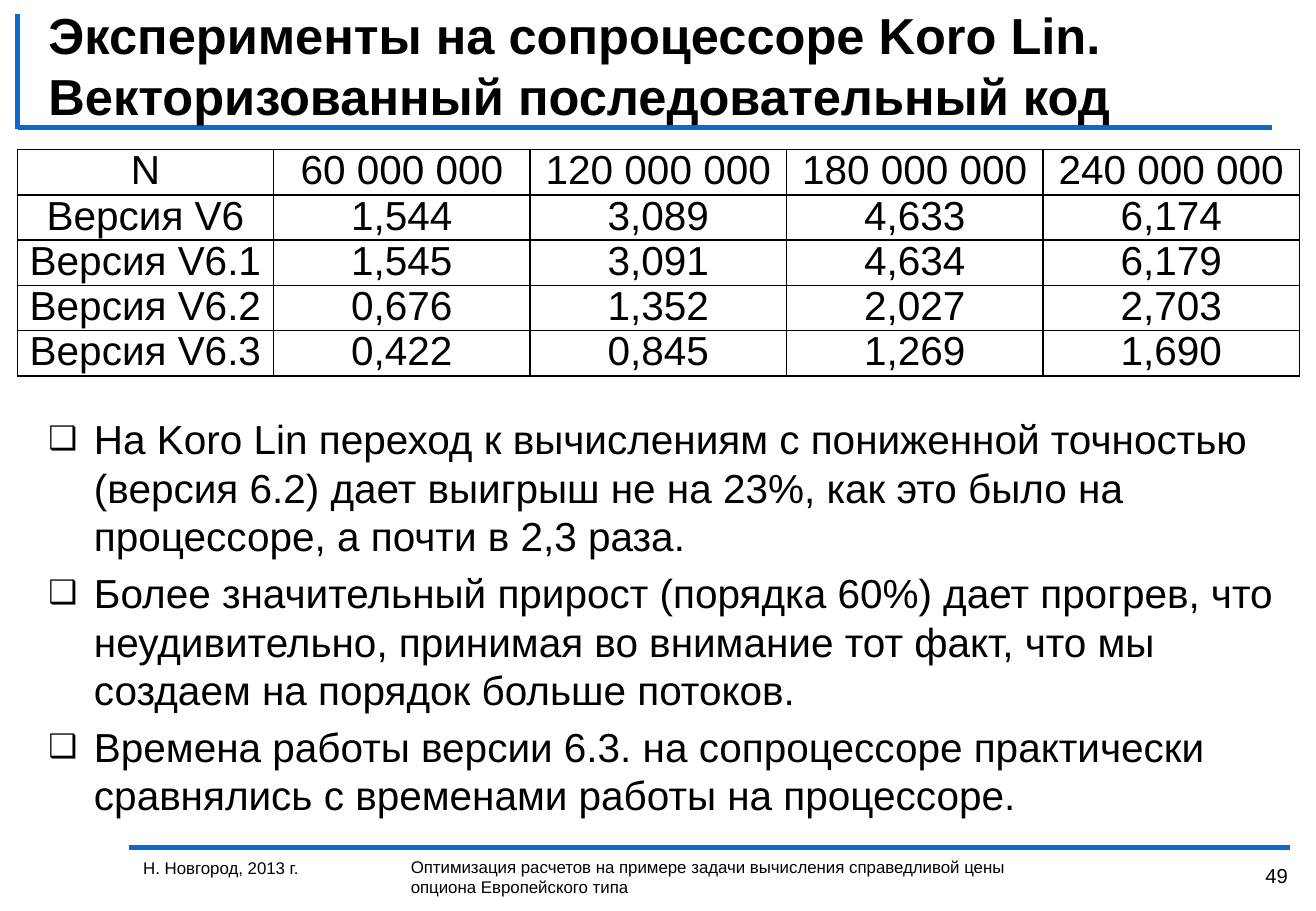
"""Build the slide on coprocessor timings of the vectorized sequential code."""
from dataclasses import dataclass

from lxml import etree
from pptx import Presentation
from pptx.dml.color import RGBColor
from pptx.enum.shapes import MSO_CONNECTOR
from pptx.enum.text import MSO_ANCHOR, PP_ALIGN
from pptx.oxml.ns import qn
from pptx.util import Pt

STRAIGHT = MSO_CONNECTOR.STRAIGHT
TOP, MIDDLE = MSO_ANCHOR.TOP, MSO_ANCHOR.MIDDLE
LEFT, CENTER, RIGHT = PP_ALIGN.LEFT, PP_ALIGN.CENTER, PP_ALIGN.RIGHT


@dataclass(frozen=True)
class Theme:
    font: str = "Arial"
    ink: str = "000000"
    accent: str = "0969CD"
    title: float = 30
    body: float = 24
    number: float = 12
    footer: float = 10
    rule: float = 3
    border: float = 1
    table_leading: float = 0.93


TIMINGS = [
    ["N", "60 000 000", "120 000 000", "180 000 000", "240 000 000"],
    ["Версия V6", "1,544", "3,089", "4,633", "6,174"],
    ["Версия V6.1", "1,545", "3,091", "4,634", "6,179"],
    ["Версия V6.2", "0,676", "1,352", "2,027", "2,703"],
    ["Версия V6.3", "0,422", "0,845", "1,269", "1,690"],
]
CONCLUSIONS = [
    "На Koro Lin переход к вычислениям с пониженной точностью (версия 6.2) "
    "дает выигрыш не на 23%, как это было на процессоре, а почти в 2,3 раза.",
    "Более значительный прирост (порядка 60%) дает прогрев, что неудивительно, "
    "принимая во внимание тот факт, что мы создаем на порядок больше потоков.",
    "Времена работы версии 6.3. на сопроцессоре практически сравнялись "
    "с временами работы на процессоре.",
]


def write(paragraph, text, *, theme, size, bold=False, align=LEFT,
          leading=None, before=0, bullet=None, indent=27):
    if bullet:
        properties = paragraph._p.get_or_add_pPr()
        properties.set("marL", str(Pt(indent)))
        properties.set("indent", str(-Pt(indent)))
        etree.SubElement(properties, qn("a:buSzPct"), val="80000")
        etree.SubElement(properties, qn("a:buFont"), typeface=theme.font)
        etree.SubElement(properties, qn("a:buChar"), char=bullet)
    paragraph.alignment = align
    if leading:
        paragraph.line_spacing = leading
    if before:
        paragraph.space_before = Pt(before)
    run = paragraph.add_run()
    run.text = text
    run.font.name = theme.font
    run.font.size = Pt(size)
    run.font.bold = bold
    run.font.color.rgb = RGBColor.from_string(theme.ink)


class SlideBuilder:
    def __init__(self, slide, theme):
        self.slide = slide
        self.theme = theme

    def rule(self, x1, y1, x2, y2):
        line = self.slide.shapes.add_connector(
            STRAIGHT, Pt(x1), Pt(y1), Pt(x2), Pt(y2))
        line.line.color.rgb = RGBColor.from_string(self.theme.accent)
        line.line.width = Pt(self.theme.rule)
        etree.SubElement(line._element.spPr, qn("a:effectLst"))

    def text(self, paragraphs, left, top, width, height, *,
             anchor=TOP, gap=0, **style):
        box = self.slide.shapes.add_textbox(
            Pt(left), Pt(top), Pt(width), Pt(height))
        frame = box.text_frame
        frame.word_wrap = True
        frame.vertical_anchor = anchor
        for index, text in enumerate(paragraphs):
            paragraph = frame.add_paragraph() if index else frame.paragraphs[0]
            write(paragraph, text, theme=self.theme,
                  before=gap if index else 0, **style)

    def border(self, cell):
        properties = cell._tc.get_or_add_tcPr()
        for position, side in enumerate(("lnL", "lnR", "lnT", "lnB")):
            edge = etree.Element(
                qn(f"a:{side}"), w=str(Pt(self.theme.border)))
            fill = etree.SubElement(edge, qn("a:solidFill"))
            etree.SubElement(fill, qn("a:srgbClr"), val=self.theme.ink)
            properties.insert(position, edge)

    def table(self, rows, left, top, column_width, row_height):
        columns = len(rows[0])
        grid = self.slide.shapes.add_table(
            len(rows), columns, Pt(left), Pt(top),
            Pt(column_width * columns), Pt(row_height * len(rows))).table
        grid.first_row = grid.horz_banding = False
        for column in grid.columns:
            column.width = Pt(column_width)
        for r, values in enumerate(rows):
            grid.rows[r].height = Pt(row_height)
            for c, value in enumerate(values):
                cell = grid.cell(r, c)
                cell.fill.background()
                cell.vertical_anchor = MIDDLE
                cell.margin_left = cell.margin_right = Pt(5)
                cell.margin_top = cell.margin_bottom = 0
                self.border(cell)
                write(cell.text_frame.paragraphs[0], value, theme=self.theme,
                      size=self.theme.body, align=CENTER,
                      leading=self.theme.table_leading)


def main():
    theme = Theme()
    deck = Presentation()
    deck.slide_width, deck.slide_height = Pt(780), Pt(540)
    page = SlideBuilder(deck.slides.add_slide(deck.slide_layouts[6]), theme)

    page.rule(76.5, 502.5, 764.6, 502.5)
    page.rule(10.4, 75.6, 753.8, 75.6)
    page.rule(10.4, 8.6, 10.4, 76.3)

    page.text(["49"], 730.8, 508.3, 39.6, 22.3, size=theme.number, align=RIGHT)
    page.text(["Н. Новгород, 2013 г."], 77.8, 504.7, 151.2, 33.8,
              size=theme.footer)
    page.text(["Оптимизация расчетов на примере задачи вычисления "
               "справедливой цены опциона Европейского типа"],
              236.4, 504, 378.7, 31.7, size=theme.footer)

    page.text(["Эксперименты на сопроцессоре Koro Lin. "
               "Векторизованный последовательный код"],
              21.6, 16.6, 743, 43.9, size=theme.title, bold=True,
              anchor=MIDDLE)
    page.text(CONCLUSIONS, 21.6, 241.9, 743, 244.1, size=theme.body,
              gap=4.8, bullet="❑")
    page.table(TIMINGS, 10.2, 88.7, 152, 26.8)

    deck.save("out.pptx")


if __name__ == "__main__":
    main()
